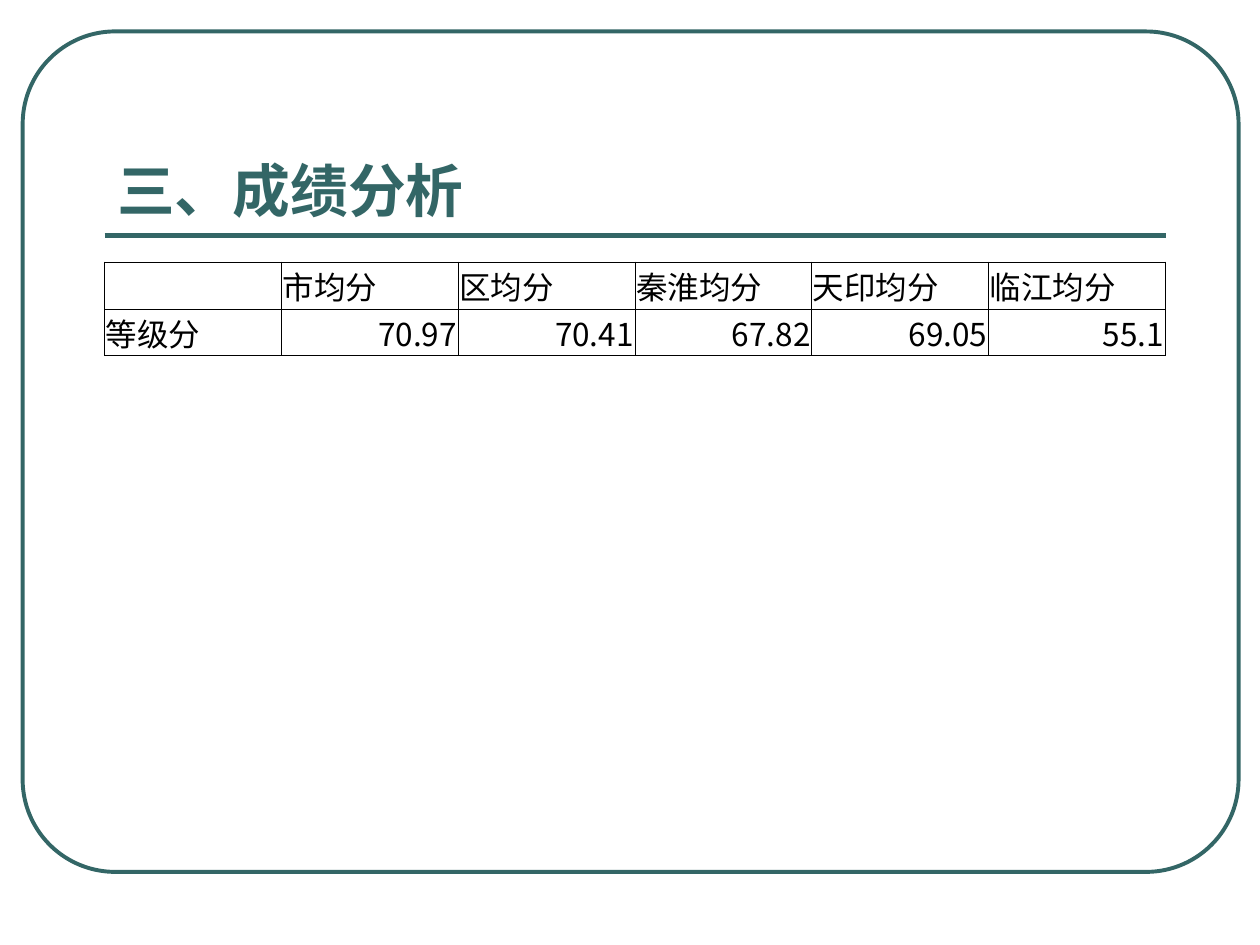
from lxml import etree
from pptx import Presentation, util as u
from pptx.dml.color import RGBColor
from pptx.enum import shapes, text
from pptx.oxml.ns import qn

TEAL, BLACK = "336666", "000000"


def hue(code):
    return RGBColor.from_string(code)


def write(par, words, size, face, code, bold=False):
    run = par.add_run()
    run.text = words
    font = run.font
    font.size, font.name, font.bold = u.Pt(size), face, bold
    font.color.rgb = hue(code)
    east = etree.SubElement(run._r.get_or_add_rPr(), qn("a:ea"))
    east.set("typeface", "Noto Sans CJK SC")


deck = Presentation()
deck.slide_width, deck.slide_height = u.Inches(10), u.Inches(7.5)
slide = deck.slides.add_slide(deck.slide_layouts[5])
left, wide = u.Inches(0.83), u.Inches(8.42)

frame = slide.shapes.add_shape(
    shapes.MSO_SHAPE.ROUNDED_RECTANGLE,
    u.Inches(0.18), u.Inches(0.25), u.Inches(9.65), u.Inches(6.67))
frame.adjustments[0] = 0.11
frame.shadow.inherit = False
frame.fill.background()
frame.line.color.rgb = hue(TEAL)
frame.line.width = u.Pt(2.25)

level = u.Inches(1.87)
rule = slide.shapes.add_connector(
    shapes.MSO_CONNECTOR.STRAIGHT, left, level, left + wide, level)
rule.line.color.rgb = hue(TEAL)
rule.line.width = u.Pt(3)
etree.SubElement(rule._element.spPr, qn("a:effectLst"))

title = slide.shapes.title
title.left, title.top = left, u.Inches(0.58)
title.width, title.height = wide, u.Inches(1.25)
body = title.text_frame
body.word_wrap = True
body.auto_size = text.MSO_AUTO_SIZE.NONE
body.vertical_anchor = text.MSO_ANCHOR.BOTTOM
body.paragraphs[0].alignment = text.PP_ALIGN.LEFT
write(body.paragraphs[0], "三、成绩分析", 33, "Montserrat", TEAL, True)

rows = [
    ["", "市均分", "区均分", "秦淮均分", "天印均分", "临江均分"],
    ["等级分", "70.97", "70.41", "67.82", "69.05", "55.1"],
]
high = u.Inches(0.37)
table = slide.shapes.add_table(
    len(rows), len(rows[0]), left, u.Inches(2.08), wide, high * len(rows)).table
table.first_row = table.horz_banding = False
for row in table.rows:
    row.height = high

for r, row in enumerate(rows):
    for c, words in enumerate(row):
        cell = table.cell(r, c)
        cell.fill.background()
        cell.vertical_anchor = text.MSO_ANCHOR.MIDDLE
        cell.margin_left = cell.margin_right = cell.margin_top = u.Inches(0.01)
        cell.margin_bottom = 0
        for n, side in enumerate(["lnL", "lnR", "lnT", "lnB"]):
            edge = etree.Element(qn("a:" + side), w=str(u.Pt(0.5)))
            fill = etree.SubElement(edge, qn("a:solidFill"))
            etree.SubElement(fill, qn("a:srgbClr"), val=BLACK)
            cell._tc.get_or_add_tcPr().insert(n, edge)
        par = cell.text_frame.paragraphs[0]
        par.alignment = text.PP_ALIGN.RIGHT if r and c else text.PP_ALIGN.LEFT
        if words:
            write(par, words, 18, "Noto Sans CJK SC", BLACK)

deck.save("out.pptx")
